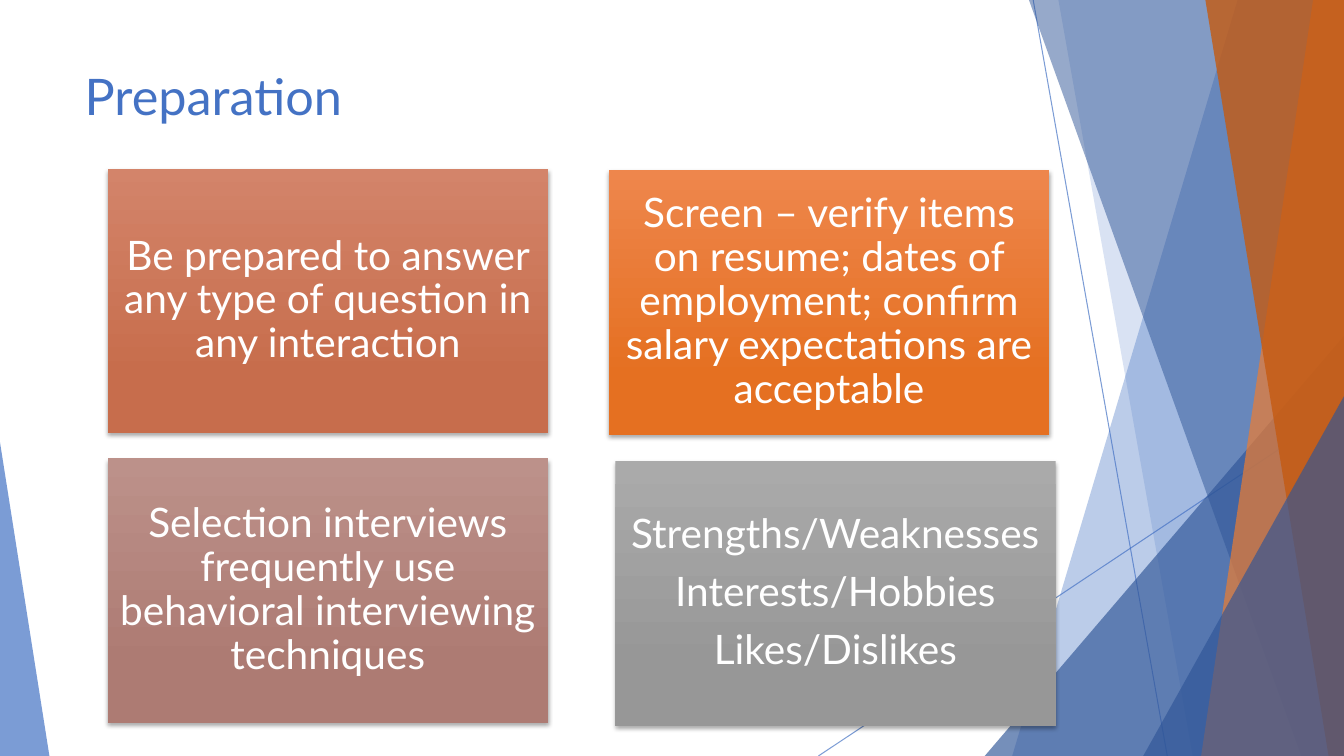
from lxml import etree
from pptx import Presentation
from pptx.dml.color import RGBColor
from pptx.enum.shapes import MSO_CONNECTOR, MSO_SHAPE
from pptx.enum.text import MSO_ANCHOR, PP_ALIGN
from pptx.oxml.ns import qn
from pptx.util import Pt

STRAIGHT = MSO_CONNECTOR.STRAIGHT
RECT, TRIANGLE = MSO_SHAPE.RECTANGLE, MSO_SHAPE.ISOSCELES_TRIANGLE
LEFT, CENTER = PP_ALIGN.LEFT, PP_ALIGN.CENTER
TOP, MIDDLE = MSO_ANCHOR.TOP, MSO_ANCHOR.MIDDLE
W, H = 960, 540
BLUE, NAVY, ORANGE, RUST = "4472C4", "2F5597", "ED7D31", "C55A11"


def paint(fill, color, end=None, alpha=100):
    """Fill with one colour, or with a top-down gradient when end is given."""
    if end:
        fill.gradient()
        fill.gradient_angle = 270
        for stop, value, position in zip(fill.gradient_stops, (color, end), (0, 0.78)):
            stop.color.rgb = RGBColor.from_string(value)
            stop.position = position
        return
    fill.solid()
    fill.fore_color.rgb = RGBColor.from_string(color)
    if alpha < 100:
        clr = fill._xPr.find(qn("a:solidFill"))[0]
        etree.SubElement(clr, qn("a:alpha"), val=str(alpha * 1000))


def write(sp, text, size, color, align=LEFT, anchor=TOP, inset=None, spacing=0.9, after=0):
    tf = sp.text_frame
    tf.word_wrap = True
    tf.vertical_anchor = anchor
    if inset is not None:
        tf.margin_left = tf.margin_right = tf.margin_top = tf.margin_bottom = Pt(inset)
    for i, line in enumerate(text.split("\n")):
        p = tf.paragraphs[0] if i == 0 else tf.add_paragraph()
        p.alignment = align
        p.line_spacing = spacing
        p.space_after = Pt(after)
        r = p.add_run()
        r.text = line
        r.font.name = "Lato"
        r.font.size = Pt(size)
        paint(r.font.fill, color)


prs = Presentation()
prs.slide_width, prs.slide_height = Pt(W), Pt(H)
s = prs.slides.add_slide(prs.slide_layouts[5])

# Thin background lines
for x1, y1, x2, y2 in [(738, 0, 833.8, H), (W, 290, 584.6, H)]:
    line = s.shapes.add_connector(STRAIGHT, Pt(x1), Pt(y1), Pt(x2), Pt(y2))
    line.line.width = Pt(0.75)
    paint(line.line.fill, BLUE, alpha=70)
    etree.SubElement(line._element.spPr, qn("a:effectLst"))

# Background facets: bands (top x, bottom x) reach the right edge,
# triangles (left, top, width, apex) stand on the bottom edge
facets = [
    ((884, 723), BLUE, 36),
    ((756, 852), BLUE, 20),
    ((703.4, 240, 256.6, 1), NAVY, 66),
    ((735, 929.5), NAVY, 50),
    ((938, 858), ORANGE, 70),
    ((861, 949), RUST, 80),
    ((816.6, 283, 143.4, 1), NAVY, 66),
    ((0, 316, 35.3, 0), BLUE, 70),
]
for geometry, color, alpha in facets:
    if len(geometry) == 2:
        top_x, bottom_x = geometry
        outline = s.shapes.build_freeform(Pt(top_x), 0)
        outline.add_line_segments([(Pt(W), 0), (Pt(W), Pt(H)), (Pt(bottom_x), Pt(H))])
        sp = outline.convert_to_shape()
    else:
        x, y, width, apex = geometry
        sp = s.shapes.add_shape(TRIANGLE, Pt(x), Pt(y), Pt(width), Pt(H - y))
        sp.adjustments[0] = apex
    paint(sp.fill, color, alpha=alpha)
    sp.line.fill.background()
    sp.shadow.inherit = False

# Title
title = s.shapes.title
title.left, title.top, title.width, title.height = Pt(53.3), Pt(48), Pt(676.8), Pt(104)
write(title, "Preparation", 36, BLUE)

# Four cards
cards = [
    (435, 121.7, "EE864C", "E57021",
     "Screen – verify items on resume; dates of employment; "
     "confirm salary expectations are acceptable"),
    (77, 120.5, "D3846A", "C76D4C",
     "Be prepared to answer any type of question in any interaction"),
    (77, 327.5, "BC918A", "AD7B73",
     "Selection interviews frequently use behavioral interviewing techniques"),
    (439.5, 329.5, "AAAAAA", "979797",
     "Strengths/Weaknesses\nInterests/Hobbies\nLikes/Dislikes"),
]
for x, y, light, dark, text in cards:
    sp = s.shapes.add_shape(RECT, Pt(x), Pt(y), Pt(314.6), Pt(188.8))
    paint(sp.fill, light, dark)
    sp.line.fill.background()
    sp.shadow.inherit = False
    effects = sp._element.spPr.find(qn("a:effectLst"))
    shadow = etree.SubElement(effects, qn("a:outerShdw"), blurRad=str(Pt(3)),
                              dist=str(Pt(2)), dir="5400000", rotWithShape="0")
    clr = etree.SubElement(shadow, qn("a:srgbClr"), val="000000")
    etree.SubElement(clr, qn("a:alpha"), val="35000")
    write(sp, text, 29, "FFFFFF", align=CENTER, anchor=MIDDLE, inset=8.7, after=10)

prs.save("out.pptx")
